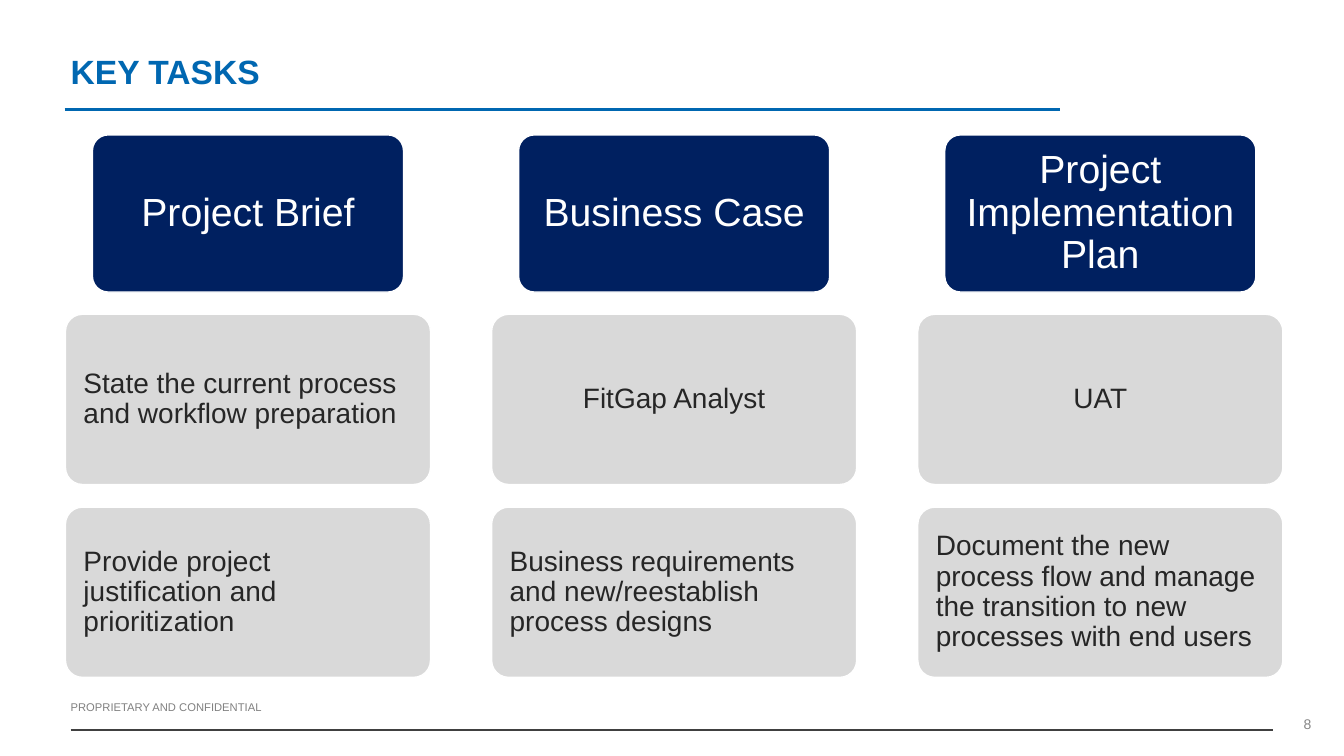
from lxml import etree
from pptx import Presentation
from pptx import util as u
from pptx.dml.color import RGBColor
from pptx.enum import shapes, text
from pptx.oxml.ns import qn

BLUE = RGBColor(0x00, 0x67, 0xB1)
NAVY = RGBColor(0x00, 0x20, 0x60)
CARD = RGBColor(0xD9, 0xD9, 0xD9)
WHITE = RGBColor(0xFF, 0xFF, 0xFF)
INK = RGBColor(0x26, 0x26, 0x26)
RULE = RGBColor(0x40, 0x40, 0x40)
GREY = RGBColor(0x80, 0x80, 0x80)
PAGE_GREY = RGBColor(0x86, 0x86, 0x86)
LEFT, CENTER, RIGHT = text.PP_ALIGN.LEFT, text.PP_ALIGN.CENTER, text.PP_ALIGN.RIGHT
MIDDLE, BOTTOM = text.MSO_ANCHOR.MIDDLE, text.MSO_ANCHOR.BOTTOM


def write(sp, words, size, color, align=LEFT, anchor=MIDDLE, inset=0, bold=False, spacing=0.9):
    tf = sp.text_frame
    tf.text = words
    tf.word_wrap = True
    tf.auto_size = text.MSO_AUTO_SIZE.NONE
    tf.vertical_anchor = anchor
    tf.margin_left = tf.margin_right = tf.margin_top = tf.margin_bottom = u.Cm(inset)
    p = tf.paragraphs[0]
    p.alignment = align
    p.line_spacing = spacing
    r = p.runs[0]
    r.font.name = "Arial"
    r.font.size = u.Pt(size)
    r.font.bold = bold
    r.font.color.rgb = color


prs = Presentation()
prs.slide_width, prs.slide_height = u.Cm(33.87), u.Cm(19.05)
s = prs.slides.add_slide(prs.slide_layouts[5])

# Title
title = s.shapes.title
title.left, title.top, title.width, title.height = u.Cm(1.78), u.Cm(0.89), u.Cm(24.94), u.Cm(1.93)
write(title, "KEY TASKS", 24, BLUE, bold=True)

# Rules under the title and above the page edge
for x1, x2, y, color, width in [(1.63, 26.72, 2.77, BLUE, 2.25), (1.78, 32.08, 18.39, RULE, 1)]:
    line = s.shapes.add_connector(shapes.MSO_CONNECTOR.STRAIGHT, u.Cm(x1), u.Cm(y), u.Cm(x2), u.Cm(y))
    line.line.color.rgb = color
    line.line.width = u.Pt(width)
    etree.SubElement(line._element.spPr, qn("a:effectLst"))

# Task columns: one header above two cards
columns = [
    ("Project Brief",
     ("State the current process and workflow preparation", LEFT),
     ("Provide project justification and prioritization", LEFT)),
    ("Business Case",
     ("FitGap Analyst", CENTER),
     ("Business requirements and new/reestablish process designs", LEFT)),
    ("Project Implementation Plan",
     ("UAT", CENTER),
     ("Document the new process flow and manage the transition to new processes with end users", LEFT)),
]
CARD_W, CARD_H, HEAD_W, HEAD_H = 9.2, 4.29, 7.84, 3.96
for i, (heading, *tasks) in enumerate(columns):
    x = 1.65 + 10.74 * i
    boxes = [(x + (CARD_W - HEAD_W) / 2, 3.4, HEAD_W, HEAD_H, NAVY, heading, 28, WHITE, CENTER, 0.42)]
    for j, (task, align) in enumerate(tasks):
        boxes.append((x, 7.92 + 4.86 * j, CARD_W, CARD_H, CARD, task, 20, INK, align, 0.33))
    for left, top, w, h, fill, words, size, color, align, inset in boxes:
        sp = s.shapes.add_shape(shapes.MSO_SHAPE.ROUNDED_RECTANGLE, u.Cm(left), u.Cm(top), u.Cm(w), u.Cm(h))
        sp.adjustments[0] = 0.1
        sp.shadow.inherit = False
        sp.fill.solid()
        sp.fill.fore_color.rgb = fill
        sp.line.color.rgb = WHITE
        sp.line.width = u.Pt(1)
        write(sp, words, size, color, align, inset=inset)

# Footer and page number
footer = s.shapes.add_textbox(u.Cm(1.78), u.Cm(17.65), u.Cm(27.74), u.Cm(0.33))
write(footer, "PROPRIETARY AND CONFIDENTIAL", 8, GREY, anchor=BOTTOM, spacing=1.0)
page = s.shapes.add_textbox(u.Cm(32.36), u.Cm(17.98), u.Cm(0.69), u.Cm(0.48))
write(page, "8", 10, PAGE_GREY, RIGHT, BOTTOM, spacing=1.0)

prs.save("out.pptx")
